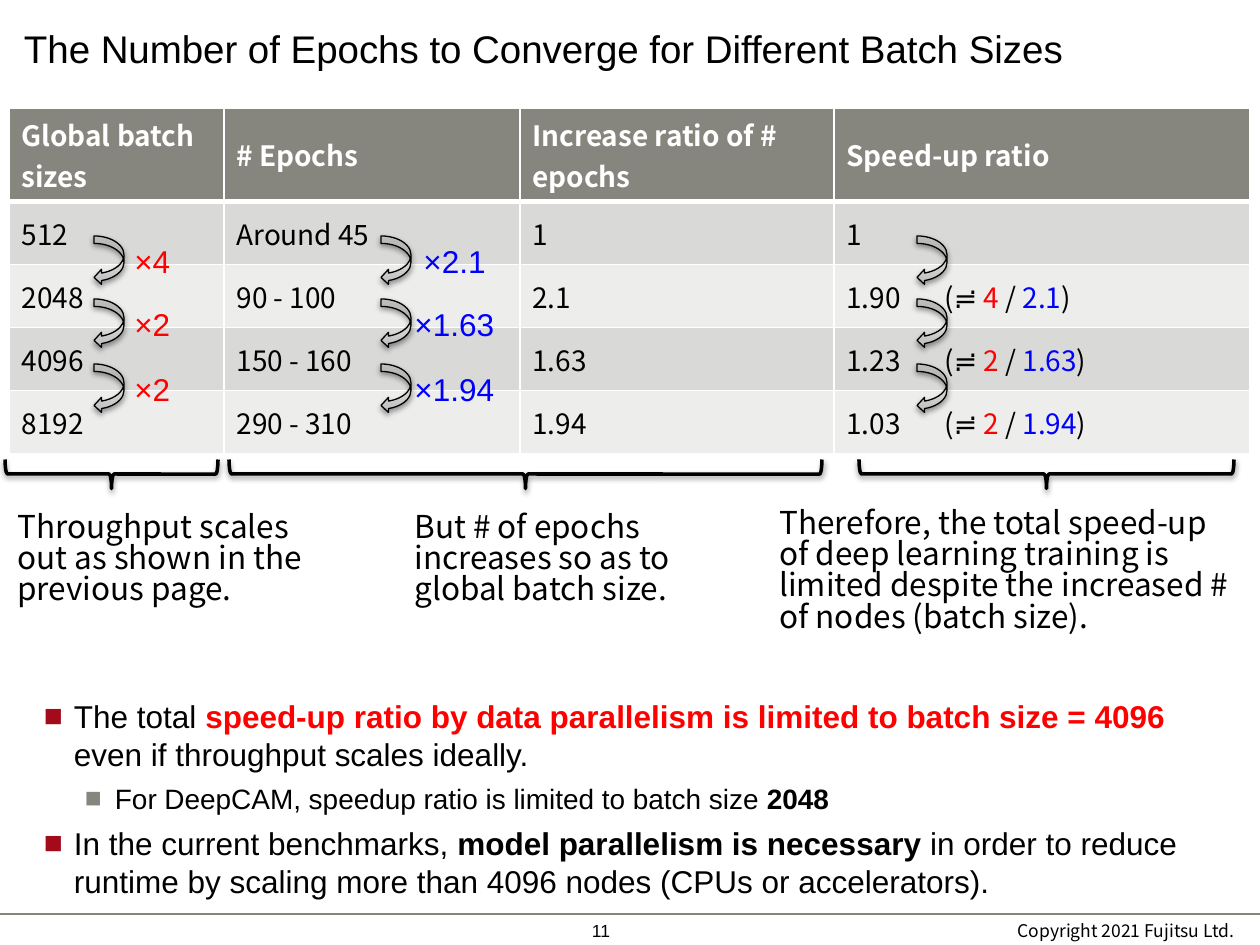
from typing import NamedTuple

from pptx import Presentation
from pptx.dml.color import RGBColor
from pptx.enum.shapes import MSO_CONNECTOR as Connector, MSO_SHAPE as Shape
from pptx.enum.text import MSO_ANCHOR as Anchor, MSO_AUTO_SIZE as AutoSize, PP_ALIGN as Align
from pptx.oxml import parse_xml
from pptx.oxml.ns import nsdecls
from pptx.util import Emu, Pt

BLACK = RGBColor(0x00, 0x00, 0x00)
WHITE = RGBColor(0xFF, 0xFF, 0xFF)
RED = RGBColor(0xFF, 0x00, 0x00)
BLUE = RGBColor(0x00, 0x00, 0xFF)
OLIVE = RGBColor(0x87, 0x86, 0x7E)
CRIMSON = RGBColor(0xA3, 0x0B, 0x1A)
DARK_BAND = RGBColor(0xD9, 0xD9, 0xD8)
LIGHT_BAND = RGBColor(0xED, 0xED, 0xEC)

ARIAL = "Arial"
NOTO = "Noto Sans CJK JP"
EMU_PER_PX = 914400 / 126


def px(length: float) -> Emu:
    return Emu(round(length * EMU_PER_PX))


class Span(NamedTuple):
    text: str
    color: RGBColor = BLACK
    bold: bool = False


class Frame(NamedTuple):
    left: int
    top: int
    width: int
    height: int


class Bullet(NamedTuple):
    level: int
    indent: int
    color: RGBColor
    size: int
    spans: list[Span]


class Column(NamedTuple):
    """Three arrows down a column, each with an optional factor beside it."""
    arrow_left: int
    color: RGBColor
    factors: list[tuple[str, Frame]]


def write_spans(para, spans: list[Span], size: int, font: str) -> None:
    for span in spans:
        run = para.add_run()
        run.text = span.text
        run.font.size = Pt(size)
        run.font.name = font
        run.font.bold = span.bold
        run.font.color.rgb = span.color


def add_text(frame: Frame, spans: list[Span], size: int, font: str, inset: bool = False,
             wrap: bool = True, anchor=Anchor.TOP, align=Align.LEFT):
    box = page.shapes.add_textbox(*map(px, frame))
    text = box.text_frame
    text.word_wrap = wrap
    text.auto_size = AutoSize.NONE
    text.vertical_anchor = anchor
    if not inset:
        text.margin_left = text.margin_top = text.margin_right = text.margin_bottom = 0
    text.paragraphs[0].alignment = align
    write_spans(text.paragraphs[0], spans, size, font)
    return box


def add_shadow(shape) -> None:
    shape.shadow.inherit = False
    effects = shape._element.spPr.find("{*}effectLst")
    effects.append(parse_xml(
        f'<a:outerShdw {nsdecls("a")} blurRad="40000" dist="20000" dir="5400000" rotWithShape="0">'
        '<a:srgbClr val="000000"><a:alpha val="38000"/></a:srgbClr></a:outerShdw>'))


def add_arrow(left: int, top: int) -> None:
    arrow = page.shapes.add_shape(Shape.CURVED_LEFT_ARROW, px(left), px(top), px(30), px(49))
    arrow.line.color.rgb = BLACK
    arrow.line.width = Pt(0.75)
    stops = "".join(f'<a:gs pos="{at}000"><a:srgbClr val="{color}"/></a:gs>'
                    for at, color in ((0, "BDBDBD"), (35, "D1D1D1"), (100, "EEEEEE")))
    arrow._element.spPr.find("{*}prstGeom").addnext(parse_xml(
        f'<a:gradFill {nsdecls("a")} rotWithShape="1"><a:gsLst>{stops}</a:gsLst>'
        '<a:lin ang="16200000" scaled="0"/></a:gradFill>'))
    add_shadow(arrow)


def add_brace(left: int, span: int) -> None:
    """A brace opening upwards: a tall right brace turned by a quarter."""
    middle_x, middle_y, depth = left + span / 2, 474, 29
    brace = page.shapes.add_shape(Shape.RIGHT_BRACE, px(middle_x - depth / 2),
                                  px(middle_y - span / 2), px(depth), px(span))
    brace.rotation = 90
    brace.fill.background()
    brace.line.color.rgb = BLACK
    brace.line.width = Pt(2)
    add_shadow(brace)


def style_cell(cell, fill: RGBColor, header: bool) -> None:
    properties = cell._tc.get_or_add_tcPr()
    for side in ("L", "R", "T", "B"):
        width = 38100 if header and side == "B" else 12700
        properties.append(parse_xml(
            f'<a:ln{side} {nsdecls("a")} w="{width}"><a:solidFill>'
            f'<a:srgbClr val="{WHITE}"/></a:solidFill></a:ln{side}>'))
    cell.fill.solid()
    cell.fill.fore_color.rgb = fill
    cell.vertical_anchor = Anchor.MIDDLE


def ratio(value: str, batch: str, epochs: str) -> list[Span]:
    return [Span(f"{value}\t(≓ "), Span(batch, RED), Span(" / "), Span(epochs, BLUE), Span(")")]


def add_results(rows: list[list], widths: list[int], heights: list[int]) -> None:
    holder = page.shapes.add_table(len(rows), len(widths), px(9), px(108),
                                   px(sum(widths)), px(sum(heights)))
    table = holder.table
    for column, width in zip(table.columns, widths):
        column.width = px(width)
    for index, (row, height) in enumerate(zip(rows, heights)):
        table.rows[index].height = px(height)
        header = index == 0
        fill = OLIVE if header else DARK_BAND if index % 2 else LIGHT_BAND
        for cell, content in zip(table.rows[index].cells, row):
            style_cell(cell, fill, header)
            para = cell.text_frame.paragraphs[0]
            if isinstance(content, str):
                content = [Span(content, WHITE if header else BLACK, header)]
            else:
                para._p.get_or_add_pPr().append(parse_xml(
                    f'<a:tabLst {nsdecls("a")}><a:tab pos="{px(98)}" algn="l"/></a:tabLst>'))
            write_spans(para, content, 16, NOTO)


def add_bullets(frame: Frame, bullets: list[Bullet]) -> None:
    text = add_text(frame, [], 18, ARIAL).text_frame
    for index, bullet in enumerate(bullets):
        para = text.add_paragraph() if index else text.paragraphs[0]
        para.level = bullet.level
        properties = para._p.get_or_add_pPr()
        properties.set("marL", str(px(bullet.indent)))
        properties.set("indent", str(-px(30)))
        for xml in (f'<a:buClr {nsdecls("a")}><a:srgbClr val="{bullet.color}"/></a:buClr>',
                    f'<a:buFont {nsdecls("a")} typeface="{ARIAL}"/>',
                    f'<a:buChar {nsdecls("a")} char="■"/>'):
            properties.append(parse_xml(xml))
        para.space_before = Pt(3 if index else 0)
        para.space_after = Pt(2)
        write_spans(para, bullet.spans, bullet.size, ARIAL)


deck = Presentation()
deck.slide_width, deck.slide_height = px(1260), px(945)
page = deck.slides.add_slide(deck.slide_layouts[6])

# Footer rule and title
rule = page.shapes.add_connector(Connector.STRAIGHT, px(0), px(914), px(1260), px(914))
rule.line.color.rgb = OLIVE
rule.line.width = Pt(1)
rule._element.spPr.append(parse_xml(f'<a:effectLst {nsdecls("a")}/>'))
add_text(Frame(24, 0, 1082, 96), [Span("The Number of Epochs to Converge for Different Batch Sizes")],
         22, ARIAL, anchor=Anchor.MIDDLE)

# Results table
add_results([
    ["Global batch sizes", "# Epochs", "Increase ratio of # epochs", "Speed-up ratio"],
    ["512", "Around 45", "1", "1"],
    ["2048", "90 - 100", "2.1", ratio("1.90", "4", "2.1")],
    ["4096", "150 - 160", "1.63", ratio("1.23", "2", "1.63")],
    ["8192", "290 - 310", "1.94", ratio("1.03", "2", "1.94")],
], widths=[215, 296, 314, 416], heights=[86] + [63] * 4)

# Arrows between rows, with their factors
STEP_TOPS = (236, 299, 364)
for arrow_left, color, factors in (
        (94, RED, (("×4", 122), ("×2", 122), ("×2", 122))),
        (381, BLUE, (("×2.1", 411), ("×1.63", 402), ("×1.94", 402))),
        (917, BLACK, ())):
    for top in STEP_TOPS:
        add_arrow(arrow_left, top)
    for top, (factor, left) in zip(STEP_TOPS, factors):
        add_text(Frame(left, top, 120, 50), [Span(factor, color)], 18, ARIAL,
                 inset=True, wrap=False)

# Braces and the remarks below them
for left, span in ((5, 213), (229, 593), (859, 375)):
    add_brace(left, span)
for frame, remark in (
        (Frame(5, 507, 346, 127), "Throughput scales out as shown in the previous page."),
        (Frame(402, 507, 346, 127), "But # of epochs increases so as to global batch size."),
        (Frame(767, 503, 484, 165), "Therefore, the total speed-up of deep learning training is "
                                    "limited despite the increased # of nodes (batch size).")):
    box = add_text(frame, [Span(remark)], 18, NOTO, inset=True)
    box.text_frame.paragraphs[0].line_spacing = 0.83

# Conclusions
add_bullets(Frame(44, 697, 1171, 210), [
    Bullet(0, 30, CRIMSON, 18, [
        Span("The total "),
        Span("speed-up ratio by data parallelism is limited to batch size = 4096 ", RED, True),
        Span("even if throughput scales ideally.")]),
    Bullet(1, 71, OLIVE, 16, [
        Span("For DeepCAM, speedup ratio is limited to batch size "), Span("2048", bold=True)]),
    Bullet(0, 30, CRIMSON, 18, [
        Span("In the current benchmarks, "), Span("model parallelism is necessary ", bold=True),
        Span("in order to reduce runtime by scaling more than 4096 nodes (CPUs or accelerators).")]),
])

# Footer
add_text(Frame(680, 917, 554, 28), [Span("Copyright 2021 Fujitsu Ltd.")], 10, NOTO,
         anchor=Anchor.MIDDLE, align=Align.RIGHT)
add_text(Frame(592, 917, 74, 28), [Span("11")], 10, ARIAL, anchor=Anchor.MIDDLE)

deck.save("out.pptx")
